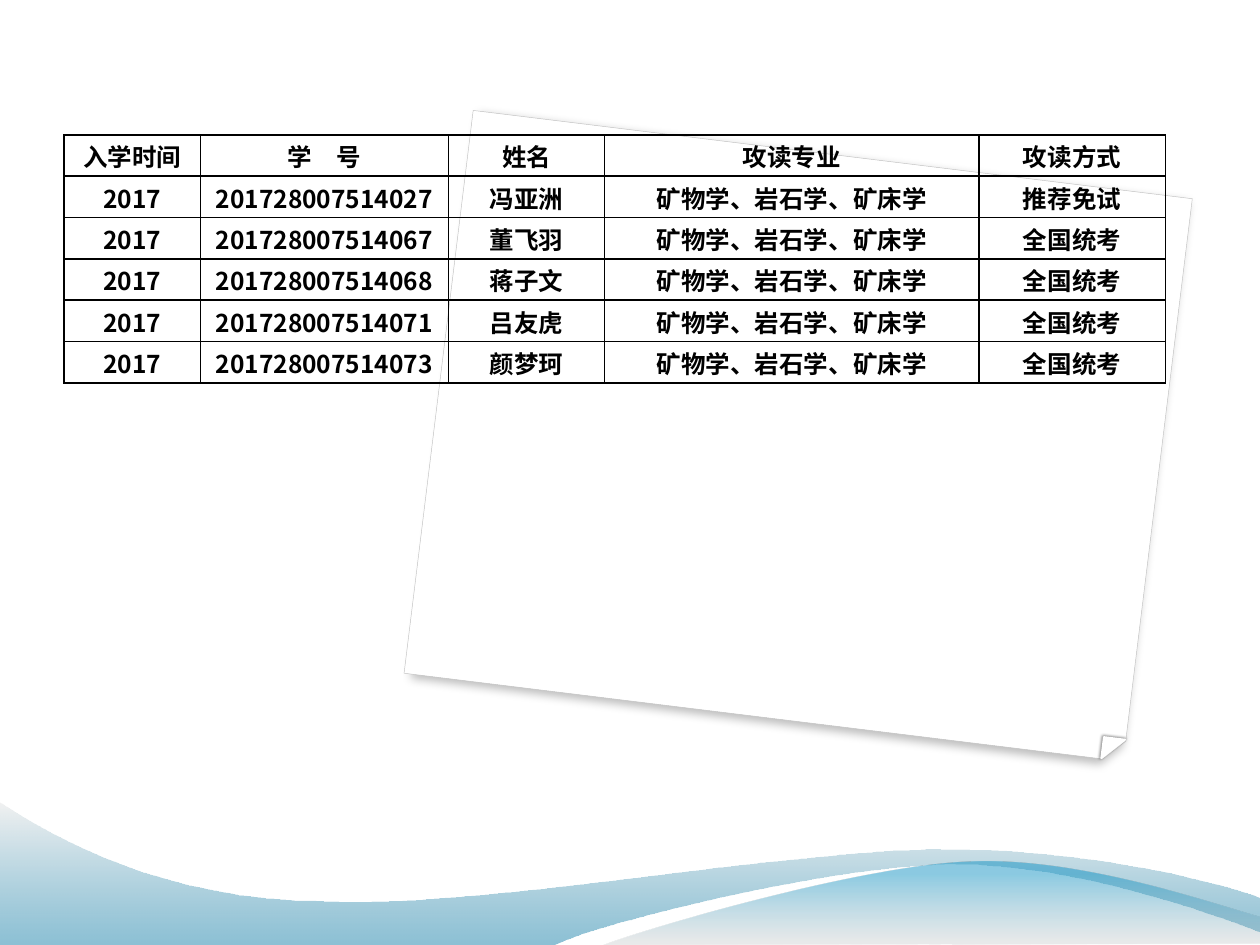
from dataclasses import dataclass, field

from lxml.etree import SubElement
from pptx import Presentation
from pptx.dml.color import RGBColor
from pptx.enum.shapes import MSO_SHAPE as Preset
from pptx.enum.text import MSO_ANCHOR as Anchor, PP_ALIGN as Align
from pptx.oxml.ns import qn
from pptx.util import Inches, Pt

COLORS = {
    "white": "FFFFFF", "black": "000000", "edge": "C0C0C0",
    "deep": "0074A1", "mist": "E7E7E7", "gray": "BDBDBD", "blue": "008BBF",
}
FONT = "Noto Sans CJK SC"
UNITS = 10000

MAJOR = "矿物学、岩石学、矿床学"
EXAM = "全国统考"
HEADER = ("入学时间", "学　号", "姓名", "攻读专业", "攻读方式")
STUDENTS = (
    ("027", "冯亚洲", "推荐免试"),
    ("067", "董飞羽", EXAM),
    ("068", "蒋子文", EXAM),
    ("071", "吕友虎", EXAM),
    ("073", "颜梦珂", EXAM),
)
COLUMN_WIDTHS = (1.08, 1.97, 1.24, 2.97, 1.48)
TABLE_HEIGHT = 1.97


@dataclass
class Sheet:
    preset: Preset
    box: tuple[float, ...]
    line: str
    line_width: float
    shadow: tuple[float, ...]
    adjustments: tuple[float, ...] = ()
    shadow_scale: dict[str, str] = field(default_factory=dict)


@dataclass
class Stop:
    position: float
    color: str
    opacity: int


@dataclass
class Wave:
    start: tuple[float, float]
    segments: tuple[tuple[float, ...], ...]
    stops: tuple[Stop, Stop]


SHEETS = (
    Sheet(Preset.SNIP_ROUND_RECTANGLE, (3.46, 1.21, 5.75, 4.5), "edge", 0.25,
          (25, 5, 3, 125), (0, 0.036),
          {"sx": "98500", "sy": "100080", "kx": "100000"}),
    Sheet(Preset.RIGHT_TRIANGLE, (8.75, 5.86, 0.17, 0.17), "white", 1,
          (47, 1.6, 0.5, 215)),
)
WAVES = (
    Wave((0, 7.5), (
        (4.4, 7.5),
        (4.76, 7.32, 6.64, 6.86, 7.58, 6.86),
        (8.53, 6.86, 9.58, 7.24, 10, 7.4),
        (10.01, 7.13),
        (9.83, 7.05, 8.7, 6.73, 7.46, 6.74),
        (6.22, 6.74, 3.82, 7.21, 2.57, 7.15),
        (1.29, 7.14, 0.46, 6.66, -0.01, 6.36),
        (0, 7.5),
    ), (Stop(0, "deep", 45), Stop(1, "mist", 55))),
    Wave((4.79, 7.5), (
        (5.09, 7.38, 6.82, 6.87, 7.69, 6.84),
        (8.56, 6.8, 9.61, 7.17, 10, 7.28),
        (10, 7.49),
        (4.79, 7.5),
    ), (Stop(0, "gray", 30), Stop(0.8, "blue", 45))),
)


def rgb(name: str) -> RGBColor:
    return RGBColor.from_string(COLORS[name])


def add_sheet(slide, sheet: Sheet) -> None:
    shape = slide.shapes.add_shape(sheet.preset, *map(Inches, sheet.box))
    shape.rotation = 7
    for index, value in enumerate(sheet.adjustments):
        shape.adjustments[index] = value
    shape.fill.solid()
    shape.fill.fore_color.rgb = rgb("white")
    shape.line.color.rgb = rgb(sheet.line)
    shape.line.width = Pt(sheet.line_width)
    shape.shadow.inherit = False
    properties = shape.element.spPr
    properties.find(qn("a:xfrm")).set("flipV", "1")
    opacity, blur, distance, angle = sheet.shadow
    shadow = SubElement(
        properties.find(qn("a:effectLst")), qn("a:outerShdw"),
        blurRad=str(Pt(blur)), dist=str(Pt(distance)),
        dir=str(angle * 60000), algn="tl", rotWithShape="0",
        **sheet.shadow_scale)
    color = SubElement(shadow, qn("a:srgbClr"), val=COLORS["black"])
    SubElement(color, qn("a:alpha"), val=str(opacity * 1000))


def bend_segments(shape, segments: tuple[tuple[float, ...], ...]) -> None:
    lines = iter(list(shape.element.iter(qn("a:lnTo"))))
    for segment in segments:
        line = next(lines)
        if len(segment) == 6:
            line.tag = qn("a:cubicBezTo")
            for _ in range(2):
                extra = next(lines)
                line.append(extra[0])
                extra.getparent().remove(extra)


def add_wave(slide, wave: Wave) -> None:
    points = [wave.start]
    for segment in wave.segments:
        points += zip(segment[::2], segment[1::2])
    scaled = [(x * UNITS, y * UNITS) for x, y in points]
    builder = slide.shapes.build_freeform(*scaled[0], scale=Inches(1) / UNITS)
    builder.add_line_segments(scaled[1:], close=True)
    shape = builder.convert_to_shape()
    bend_segments(shape, wave.segments)
    shape.shadow.inherit = False
    shape.line.fill.background()
    shape.fill.gradient()
    shape.fill.gradient_angle = 90
    for target, stop in zip(shape.fill.gradient_stops, wave.stops):
        target.position = stop.position
        target.color.rgb = rgb(stop.color)
    colors = shape.element.spPr.iter(qn("a:srgbClr"))
    for color, stop in zip(colors, wave.stops):
        SubElement(color, qn("a:alpha"), val=str(stop.opacity * 1000))


def add_borders(cell) -> None:
    properties = cell._tc.get_or_add_tcPr()
    for index, side in enumerate(("lnL", "lnR", "lnT", "lnB")):
        line = SubElement(properties, qn(f"a:{side}"), w=str(Pt(1)))
        properties.insert(index, line)
        fill = SubElement(line, qn("a:solidFill"))
        SubElement(fill, qn("a:srgbClr"), val=COLORS["black"])


def fill_cell(cell, text: str) -> None:
    cell_format = {
        "vertical_anchor": Anchor.MIDDLE, "margin_left": Inches(0.01),
        "margin_right": Inches(0.01), "margin_top": Inches(0.01),
        "margin_bottom": 0,
    }
    for name, value in cell_format.items():
        setattr(cell, name, value)
    cell.fill.background()
    add_borders(cell)
    para = cell.text_frame.paragraphs[0]
    para.alignment = Align.CENTER
    span = para.add_run()
    span.text = text
    for name, value in {"name": FONT, "size": Pt(14), "bold": True}.items():
        setattr(span.font, name, value)
    span.font.color.rgb = rgb("black")
    SubElement(span._r.get_or_add_rPr(), qn("a:ea"), typeface=FONT)


def add_student_table(slide) -> None:
    rows = [HEADER] + [
        ("2017", f"201728007514{number}", name, MAJOR, admission)
        for number, name, admission in STUDENTS
    ]
    box = (0.51, 1.07, sum(COLUMN_WIDTHS), TABLE_HEIGHT)
    table = slide.shapes.add_table(
        len(rows), len(HEADER), *map(Inches, box)).table
    table.first_row = False
    table.horz_banding = False
    for column, width in zip(table.columns, COLUMN_WIDTHS):
        column.width = Inches(width)
    for row, texts in zip(table.rows, rows):
        row.height = Inches(TABLE_HEIGHT / len(rows))
        for cell, text in zip(row.cells, texts):
            fill_cell(cell, text)


def main() -> None:
    deck = Presentation()
    deck.slide_width, deck.slide_height = Inches(10), Inches(7.5)
    page = deck.slides.add_slide(deck.slide_layouts[6])
    page.background.fill.solid()
    page.background.fill.fore_color.rgb = rgb("white")
    for sheet in SHEETS:
        add_sheet(page, sheet)
    for wave in WAVES:
        add_wave(page, wave)
    add_student_table(page)
    deck.save("out.pptx")


if __name__ == "__main__":
    main()
